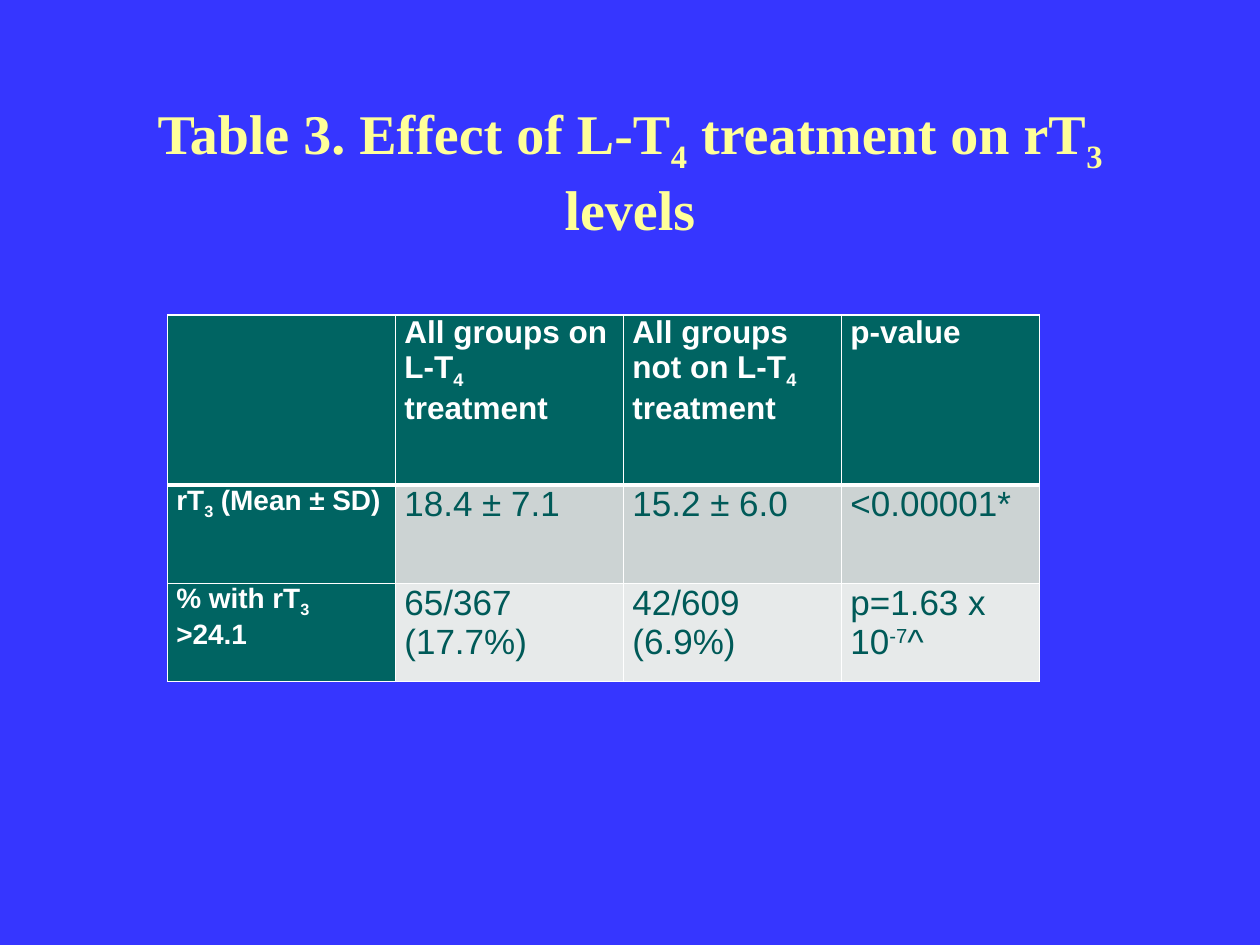
from lxml.etree import SubElement
from pptx import Presentation
from pptx.dml.color import RGBColor
from pptx.enum.text import MSO_ANCHOR, MSO_AUTO_SIZE, PP_ALIGN
from pptx.oxml.ns import qn
from pptx.util import Inches, Pt

BLUE = RGBColor(0x36, 0x36, 0xFF)
YELLOW = RGBColor(0xFF, 0xFF, 0x99)
WHITE = RGBColor(0xFF, 0xFF, 0xFF)
TEAL = RGBColor(0x00, 0x64, 0x62)
DARK_TEAL = RGBColor(0x00, 0x5A, 0x58)
GREY = RGBColor(0xCC, 0xD3, 0xD3)
LIGHT_GREY = RGBColor(0xE7, 0xEA, 0xEA)
SUB, SUP = -25, 30

TITLE = ["Table 3. Effect of L-T", ("4", SUB), " treatment on rT", ("3 ", SUB), "levels"]
ROWS = [
    [[],
     ["All groups on L-T", ("4", SUB), " treatment"],
     ["All groups not on L-T", ("4", SUB), " treatment"],
     ["p-value"]],
    [["rT", ("3", SUB), " (Mean ± SD)"], ["18.4 ± 7.1"], ["15.2 ± 6.0"], ["<0.00001*"]],
    [["% with rT", ("3", SUB), " >24.1"], ["65/367 (17.7%)"], ["42/609 (6.9%)"],
     ["p=1.63 x 10", ("-7", SUP), "^"]],
]
COL_WIDTHS = [1.81, 1.81, 1.73, 1.57]
ROW_HEIGHTS = [1.35, 0.78, 0.78]


class SlideBuilder:
    """Holds the table style and the current slide."""

    head_font, body_font = "Times New Roman", "Arial"
    row_fills = [TEAL, GREY, LIGHT_GREY]

    def __init__(self, prs):
        self.s = prs.slides.add_slide(prs.slide_layouts[5])
        fill = self.s.background.fill
        fill.solid()
        fill.fore_color.rgb = BLUE

    def add_runs(self, p, parts, font, size, color, bold):
        for part in parts:
            text, baseline = part if isinstance(part, tuple) else (part, 0)
            r = p.add_run()
            r.text = text
            r.font.name, r.font.size, r.font.bold = font, Pt(size), bold
            r.font.color.rgb = color
            if baseline:
                r._r.get_or_add_rPr().set("baseline", str(baseline * 1000))

    def title(self, parts, left, top, width, height):
        sp = self.s.shapes.title
        sp.left, sp.top = Inches(left), Inches(top)
        sp.width, sp.height = Inches(width), Inches(height)
        tf = sp.text_frame
        tf.word_wrap = True
        tf.auto_size = MSO_AUTO_SIZE.NONE
        tf.vertical_anchor = MSO_ANCHOR.BOTTOM
        tf.margin_bottom = Inches(0.58)
        p = tf.paragraphs[0]
        p.alignment = PP_ALIGN.CENTER
        self.add_runs(p, parts, self.head_font, 32, YELLOW, True)

    def borders(self, cell, top, bottom):
        tc_pr = cell._tc.get_or_add_tcPr()
        for side, width in (("L", 1), ("R", 1), ("T", top), ("B", bottom)):
            ln = SubElement(tc_pr, qn(f"a:ln{side}"), w=str(int(Pt(width))))
            SubElement(SubElement(ln, qn("a:solidFill")), qn("a:srgbClr"), val=str(WHITE))

    def cell(self, cell, parts, row, col):
        header = row == 0 or col == 0
        self.borders(cell, top=3 if row == 1 else 1, bottom=3 if row == 0 else 1)
        cell.fill.solid()
        cell.fill.fore_color.rgb = TEAL if header else self.row_fills[row]
        cell.margin_left = cell.margin_right = Inches(0.07)
        cell.margin_top = cell.margin_bottom = 0
        size = 18 if row == 0 else 16 if col == 0 else 20
        color = WHITE if header else DARK_TEAL
        self.add_runs(cell.text_frame.paragraphs[0], parts, self.body_font, size, color, header)

    def table(self, rows, left, top, col_widths, row_heights):
        table = self.s.shapes.add_table(
            len(rows), len(col_widths), Inches(left), Inches(top),
            Inches(sum(col_widths)), Inches(sum(row_heights))).table
        for column, width in zip(table.columns, col_widths):
            column.width = Inches(width)
        for i, (height, row) in enumerate(zip(row_heights, rows)):
            table.rows[i].height = Inches(height)
            for j, parts in enumerate(row):
                self.cell(table.cell(i, j), parts, i, j)


def main():
    prs = Presentation()
    prs.slide_width, prs.slide_height = Inches(10), Inches(7.5)
    builder = SlideBuilder(prs)
    builder.title(TITLE, 0.75, 1.25, 8.5, 1.25)
    builder.table(ROWS, 1.33, 2.5, COL_WIDTHS, ROW_HEIGHTS)
    prs.save("out.pptx")


if __name__ == "__main__":
    main()
